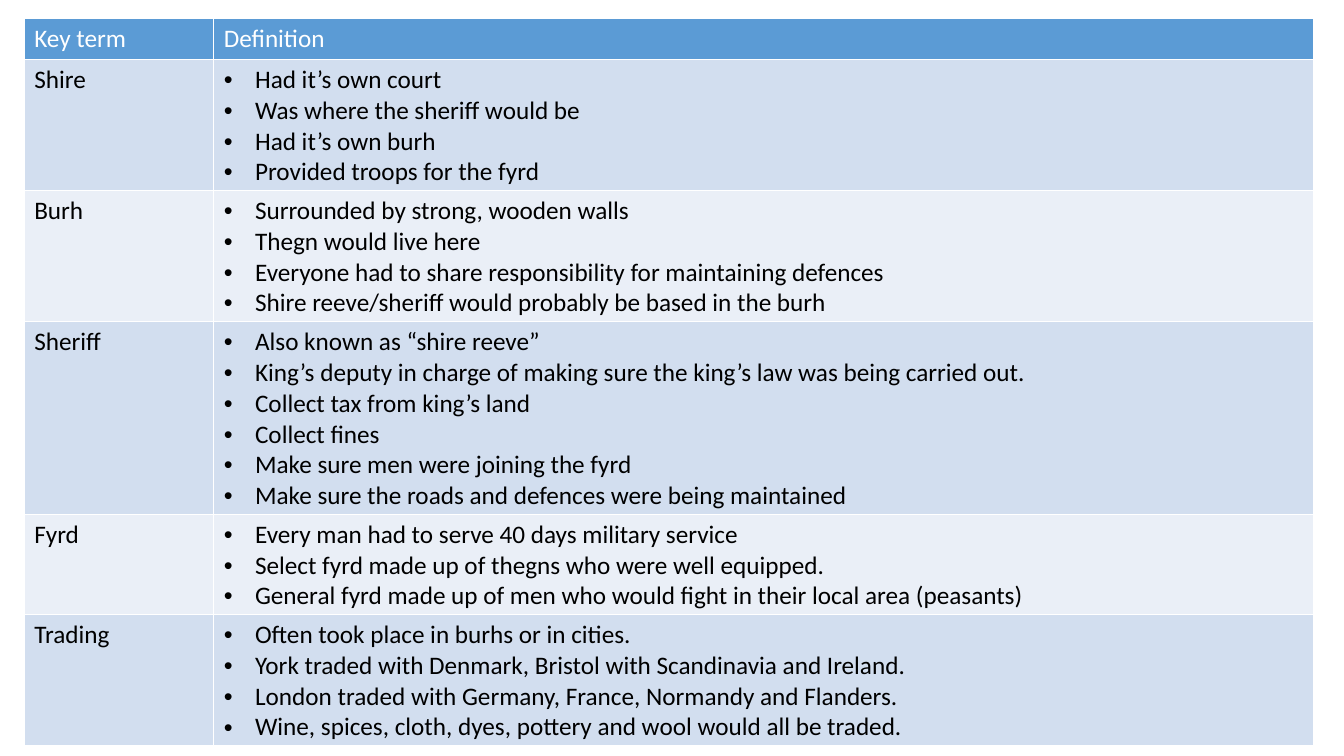
from lxml import etree
from pptx import Presentation
from pptx.dml.color import RGBColor
from pptx.oxml import parse_xml
from pptx.oxml.ns import nsdecls, qn
from pptx.util import Inches, Pt

FONT = {"name": "Calibri", "size": Pt(18), "bold": False}
WHITE, BLACK = "FFFFFF", "000000"
HEADER_FILL = "5B9BD5"
BAND_FILLS = ("D2DEEF", "EAEFF7")

TABLE_BOX = (0.24, 0.18, 12.79)
TERM_SHARE = 0.147
LINE_HEIGHT, ROW_PADDING, HEADER_HEIGHT = 0.305, 0.08, 0.41
BULLET_INDENT = Inches(0.31)
BODY_MARGINS = {"margin_top": Inches(0.05), "margin_bottom": Inches(0.03)}

HEADINGS = ("Key term", "Definition")
GLOSSARY = {
    "Shire": [
        "Had it’s own court",
        "Was where the sheriff would be",
        "Had it’s own burh",
        "Provided troops for the fyrd",
    ],
    "Burh": [
        "Surrounded by strong, wooden walls",
        "Thegn would live here",
        "Everyone had to share responsibility for maintaining defences",
        "Shire reeve/sheriff would probably be based in the burh",
    ],
    "Sheriff": [
        "Also known as “shire reeve”",
        "King’s deputy in charge of making sure the king’s law was being carried out.",
        "Collect tax from king’s land",
        "Collect fines",
        "Make sure men were joining the fyrd",
        "Make sure the roads and defences were being maintained",
    ],
    "Fyrd": [
        "Every man had to serve 40 days military service",
        "Select fyrd made up of thegns who were well equipped.",
        "General fyrd made up of men who would fight in their local area (peasants)",
    ],
    "Trading": [
        "Often took place in burhs or in cities.",
        "York traded with Denmark, Bristol with Scandinavia and Ireland.",
        "London traded with Germany, France, Normandy and Flanders.",
        "Wine, spices, cloth, dyes, pottery and wool would all be traded.",
    ],
}


def rgb(value):
    return RGBColor.from_string(value)


def set_attributes(target, values):
    for name, value in values.items():
        setattr(target, name, value)


def add_borders(cell):
    properties = cell._tc.get_or_add_tcPr()
    for side in "LRTB":
        properties.append(parse_xml(
            f'<a:ln{side} {nsdecls("a")} w="{Pt(1)}"><a:solidFill>'
            f'<a:srgbClr val="{WHITE}"/></a:solidFill></a:ln{side}>'))


def add_bullet(paragraph):
    properties = paragraph._p.get_or_add_pPr()
    properties.set("marL", str(BULLET_INDENT))
    properties.set("indent", str(-BULLET_INDENT))
    etree.SubElement(properties, qn("a:buFont"), typeface="Arial")
    etree.SubElement(properties, qn("a:buChar"), char="•")


def fill_cell(cell, lines, fill, text_color, bulleted=False):
    add_borders(cell)
    cell.fill.solid()
    cell.fill.fore_color.rgb = rgb(fill)
    cell.text = "\n".join(lines)
    for paragraph in cell.text_frame.paragraphs:
        if bulleted:
            add_bullet(paragraph)
        for run in paragraph.runs:
            set_attributes(run.font, FONT)
            run.font.color.rgb = rgb(text_color)


def add_glossary(slide, left, top, width):
    heights = [HEADER_HEIGHT] + [
        ROW_PADDING + LINE_HEIGHT * len(facts) for facts in GLOSSARY.values()]
    table = slide.shapes.add_table(
        len(heights), len(HEADINGS), Inches(left), Inches(top),
        Inches(width), Inches(sum(heights))).table
    for column, share in zip(table.columns, (TERM_SHARE, 1 - TERM_SHARE)):
        column.width = Inches(width * share)
    for row, height in zip(table.rows, heights):
        row.height = Inches(height)

    for column, heading in enumerate(HEADINGS):
        fill_cell(table.cell(0, column), [heading], HEADER_FILL, WHITE)
    for index, (term, facts) in enumerate(GLOSSARY.items()):
        band = BAND_FILLS[index % 2]
        term_cell, facts_cell = table.rows[index + 1].cells
        for cell in (term_cell, facts_cell):
            set_attributes(cell, BODY_MARGINS)
        fill_cell(term_cell, [term], band, BLACK)
        fill_cell(facts_cell, facts, band, BLACK, bulleted=True)


def main():
    presentation = Presentation()
    presentation.slide_width = Inches(13.33)
    presentation.slide_height = Inches(7.5)
    slide = presentation.slides.add_slide(presentation.slide_layouts[6])
    add_glossary(slide, *TABLE_BOX)
    presentation.save("out.pptx")


if __name__ == "__main__":
    main()
